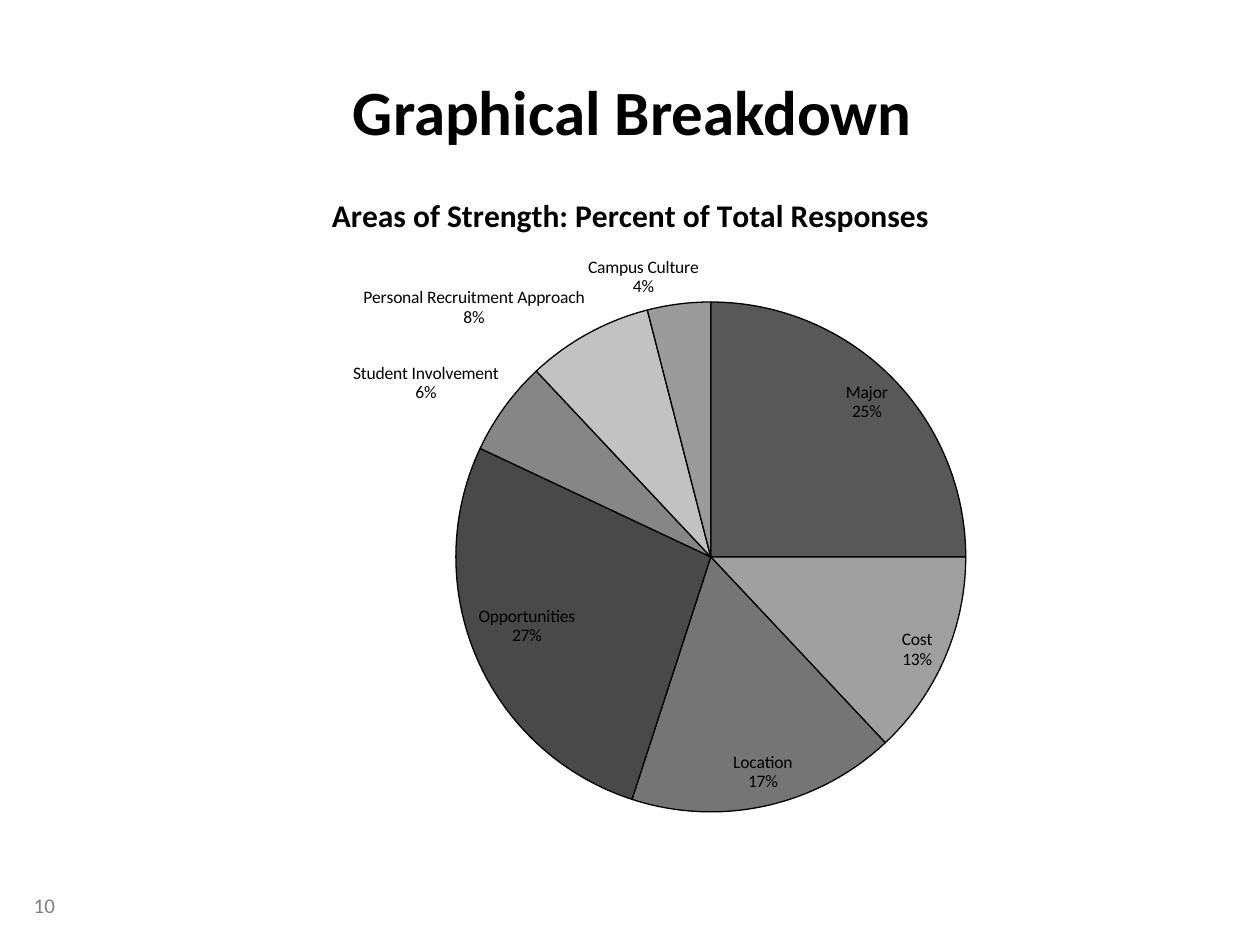
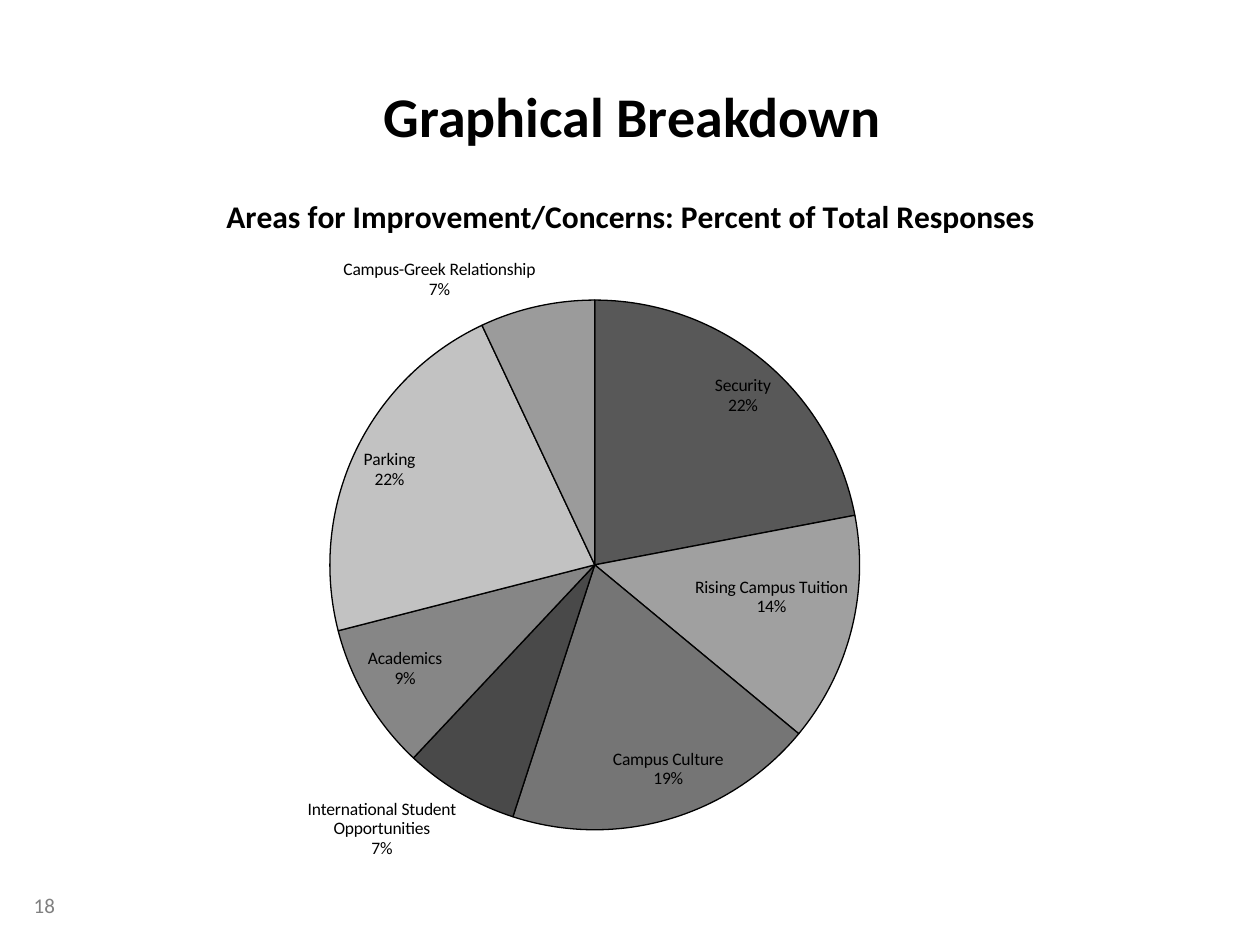
from lxml import etree
from pptx import Presentation
from pptx.chart.data import CategoryChartData
from pptx.dml.color import RGBColor
from pptx.enum.chart import XL_CHART_TYPE, XL_LABEL_POSITION
from pptx.enum.text import MSO_ANCHOR, MSO_AUTO_SIZE, PP_ALIGN
from pptx.oxml import parse_xml
from pptx.oxml.ns import nsdecls, qn
from pptx.util import Cm, Pt

PIE = XL_CHART_TYPE.PIE
BEST_FIT = XL_LABEL_POSITION.BEST_FIT
BOTTOM, TOP = MSO_ANCHOR.BOTTOM, MSO_ANCHOR.TOP
CENTER, LEFT = PP_ALIGN.CENTER, PP_ALIGN.LEFT

# Shared style
FONT = "Calibri"
BLACK, GREY = "000000", "808080"
SLICE_GREYS = ["585858", "A0A0A0", "757575", "494949", "868686", "C2C2C2", "9B9B9B"]
CHART_TOP = 3.38

# Content: frame is left, width, height; pie is left, top, diameter (cm)
breakdowns = [
    dict(number="10", heading_size=36,
         subject="Areas of Strength: Percent of Total Responses",
         frame=(0.43, 24.56, 13.34), pie=(9.19, 6.09, 10.28),
         shares={"Major": 25, "Cost": 13, "Location": 17, "Opportunities": 27,
                 "Student Involvement": 6, "Personal Recruitment Approach": 8,
                 "Campus Culture": 4}),
    dict(number="18", heading_size=32,
         subject="Areas for Improvement/Concerns: Percent of Total Responses",
         frame=(1.07, 23.29, 14.6), pie=(6.65, 6.05, 10.68),
         shares={"Security": 22, "Rising Campus Tuition": 14, "Campus Culture": 19,
                 "International Student Opportunities": 7, "Academics": 9,
                 "Parking": 22, "Campus-Greek Relationship": 7}),
]


def color(hex_code):
    return RGBColor.from_string(hex_code)


def write(frame, text, size=10, bold=False, ink=BLACK, align=CENTER):
    paragraph = frame.paragraphs[0]
    paragraph.alignment = align
    run = paragraph.add_run()
    run.text = text
    run.font.name, run.font.size, run.font.bold = FONT, Pt(size), bold
    run.font.color.rgb = color(ink)


prs = Presentation()
prs.slide_width, prs.slide_height = Cm(25.4), Cm(19.05)
title_only = prs.slide_layouts[5]

for breakdown in breakdowns:
    slide = prs.slides.add_slide(title_only)

    # Slide number
    number = slide.shapes.add_textbox(Cm(0.43), Cm(17.86), Cm(2.34), Cm(1.4)).text_frame
    number.word_wrap = True
    number.vertical_anchor = TOP
    write(number, breakdown["number"], size=12, ink=GREY, align=LEFT)

    # Heading
    heading = slide.shapes.title
    heading.left, heading.top = Cm(0.94), Cm(0.76)
    heading.width, heading.height = Cm(23.62), Cm(2.36)
    heading.text_frame.auto_size = MSO_AUTO_SIZE.NONE
    heading.text_frame.vertical_anchor = BOTTOM
    write(heading.text_frame, "Graphical Breakdown",
          size=breakdown["heading_size"], bold=True)

    # Pie of responses
    responses = CategoryChartData()
    responses.categories = list(breakdown["shares"])
    responses.add_series("Series 1", list(breakdown["shares"].values()))
    left, width, height = breakdown["frame"]
    chart = slide.shapes.add_chart(PIE, Cm(left), Cm(CHART_TOP), Cm(width),
                                   Cm(height), responses).chart
    chart.has_legend = False
    chart.font.name, chart.font.size = FONT, Pt(10)
    chart.font.color.rgb = color(BLACK)
    chart.has_title = True
    write(chart.chart_title.text_frame, breakdown["subject"], size=18, bold=True)
    chart.chart_title.include_in_layout = False

    # Slices
    plot = chart.plots[0]
    plot.vary_by_categories = True
    for index, grey in enumerate(SLICE_GREYS):
        piece = plot.series[0].points[index].format
        piece.fill.solid()
        piece.fill.fore_color.rgb = color(grey)
        piece.line.color.rgb = color(BLACK)
        piece.line.width = Pt(0.75)

    # Category and percent on two lines
    plot.has_data_labels = True
    labels = plot.data_labels
    labels.show_category_name = labels.show_percentage = True
    labels.show_value = False
    labels.number_format, labels.number_format_is_linked = "0%", False
    labels.position = BEST_FIT
    labels.font.name, labels.font.size = FONT, Pt(10)
    labels.font.color.rgb = color(BLACK)
    separator = etree.Element(qn("c:separator"))
    separator.text = "\n"
    plot_area = chart.element.find(".//" + qn("c:plotArea"))
    plot_area.find(".//" + qn("c:showPercent")).getparent().find(
        qn("c:showBubbleSize")).addnext(separator)

    # Place of the pie within the chart frame
    pie_left, pie_top, diameter = breakdown["pie"]
    fractions = {"x": (pie_left - left) / width, "y": (pie_top - CHART_TOP) / height,
                 "w": diameter / width, "h": diameter / height}
    parts = '<c:layoutTarget val="inner"/><c:xMode val="edge"/><c:yMode val="edge"/>'
    parts += "".join(f'<c:{key} val="{part:.4f}"/>' for key, part in fractions.items())
    for automatic in plot_area.findall(qn("c:layout")):
        plot_area.remove(automatic)
    plot_area.insert(0, parse_xml(
        f'<c:layout {nsdecls("c")}><c:manualLayout>{parts}</c:manualLayout></c:layout>'))

prs.save("out.pptx")
